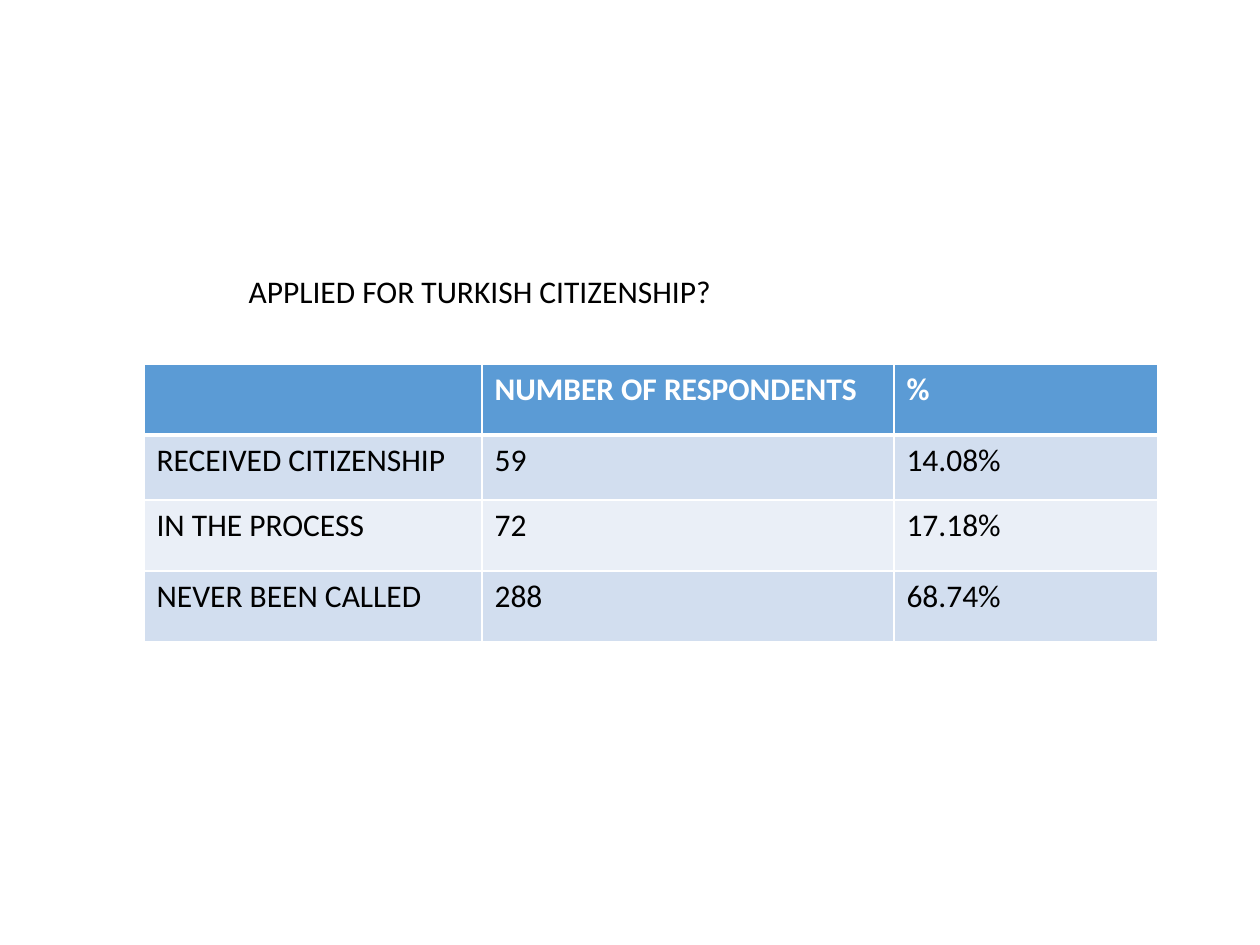
from pptx import Presentation
from pptx.dml.color import RGBColor
from pptx.enum.text import MSO_ANCHOR, MSO_AUTO_SIZE, PP_ALIGN
from pptx.oxml import parse_xml
from pptx.oxml.ns import nsdecls
from pptx.util import Emu, Pt

# Content
TITLE = "APPLIED FOR TURKISH CITIZENSHIP?"
ROWS = [
    ("", "NUMBER OF RESPONDENTS", "%"),
    ("RECEIVED CITIZENSHIP", "59", "14.08%"),
    ("IN THE PROCESS", "72", "17.18%"),
    ("NEVER BEEN CALLED", "288", "68.74%"),
]

# Layout in px, 126 to the inch
SCALE = 914400 / 126
SIZE = (1260, 945)
TITLE_BOX = (236, 266, 1004, 50)
LEFT, TOP = 144, 364
WIDTHS = (338, 412, 264)
HEIGHTS = (71, 65, 71, 71)

# Colours and type
BLACK = RGBColor(0x00, 0x00, 0x00)
WHITE = RGBColor(0xFF, 0xFF, 0xFF)
BLUE = RGBColor(0x5B, 0x9B, 0xD5)
BANDS = (RGBColor(0xEA, 0xEF, 0xF7), RGBColor(0xD2, 0xDE, 0xEF))
FONT = {"name": "Calibri", "size": Pt(18)}


def px(n):
    return Emu(round(n * SCALE))


def style(par, color, bold=False):
    for key, val in {**FONT, "bold": bold}.items():
        setattr(par.font, key, val)
    par.font.color.rgb = color


def border(cell, sides):
    props = cell._tc.get_or_add_tcPr()
    for spot, (side, width) in enumerate(sides.items()):
        props.insert(spot, parse_xml(
            f'<a:{side} {nsdecls("a")} w="{Pt(width)}"><a:solidFill>'
            f'<a:srgbClr val="{WHITE}"/></a:solidFill></a:{side}>'))


deck = Presentation()
deck.slide_width, deck.slide_height = map(px, SIZE)
slide = deck.slides.add_slide(deck.slide_layouts[5])

# Title
title = slide.shapes.title
for key, val in zip(("left", "top", "width", "height"), TITLE_BOX):
    setattr(title, key, px(val))
frame = title.text_frame
frame.text = TITLE
frame.word_wrap = True
frame.auto_size = MSO_AUTO_SIZE.SHAPE_TO_FIT_TEXT
frame.vertical_anchor = MSO_ANCHOR.TOP
frame.paragraphs[0].alignment = PP_ALIGN.LEFT
style(frame.paragraphs[0], BLACK)

# Table
table = slide.shapes.add_table(
    len(ROWS), len(WIDTHS),
    *map(px, (LEFT, TOP, sum(WIDTHS), sum(HEIGHTS)))).table
for col, width in zip(table.columns, WIDTHS):
    col.width = px(width)
for row, height in zip(table.rows, HEIGHTS):
    row.height = px(height)

# Cells: header row, then alternating bands
for r, texts in enumerate(ROWS):
    head = r == 0
    for c, text in enumerate(texts):
        cell = table.cell(r, c)
        cell.text = text
        style(cell.text_frame.paragraphs[0], WHITE if head else BLACK, head)
        cell.fill.solid()
        cell.fill.fore_color.rgb = BLUE if head else BANDS[r % 2]
        border(cell, {"lnL": 1, "lnR": 1, "lnT": 3 if r == 1 else 1,
                      "lnB": 3 if head else 1})

deck.save("out.pptx")
